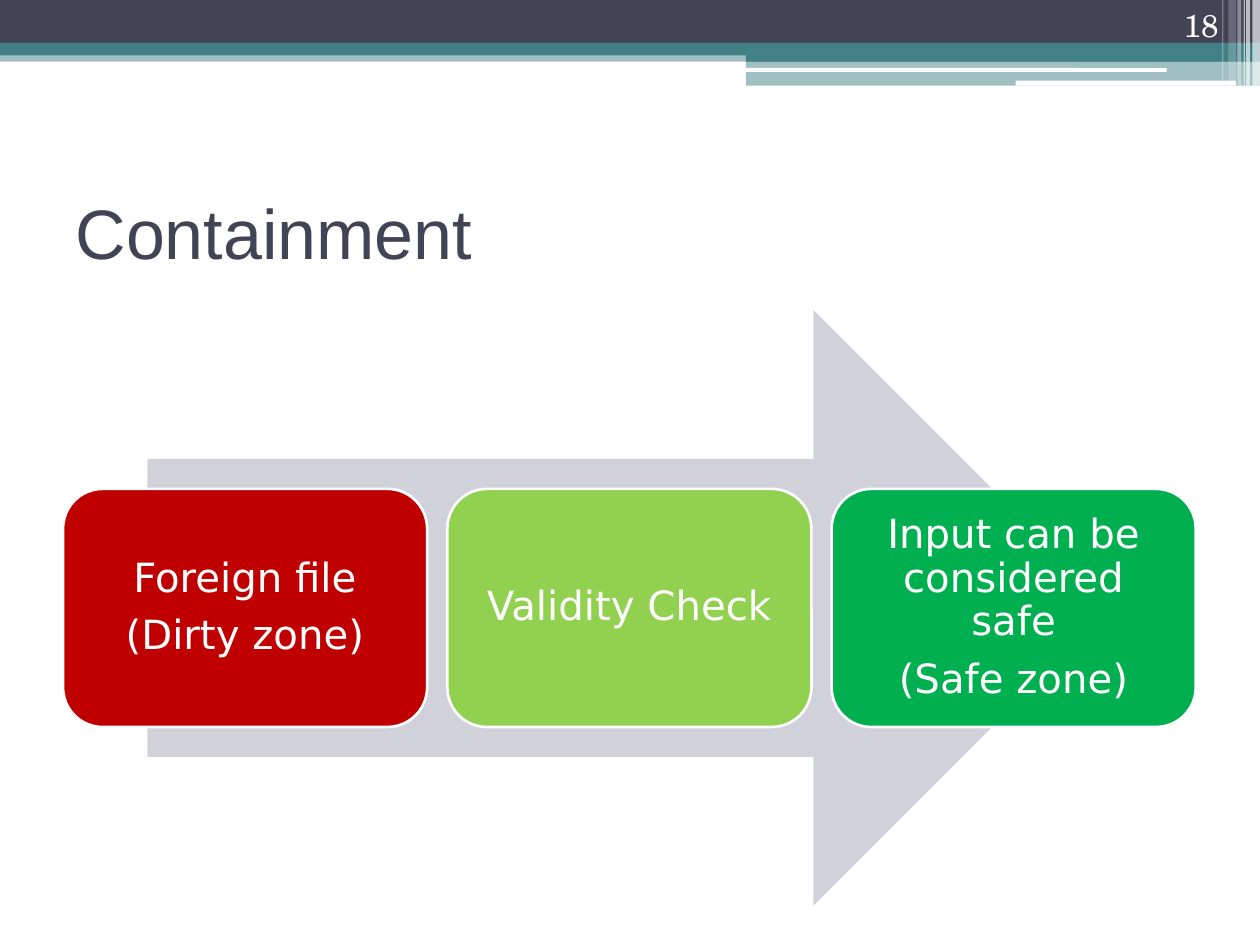
"""Build the Containment slide: a header band and three steps over an arrow."""
from lxml import etree
from pptx import Presentation
from pptx.dml.color import RGBColor
from pptx.enum.shapes import MSO_SHAPE
from pptx.enum.text import MSO_ANCHOR, PP_ALIGN
from pptx.oxml.ns import qn
from pptx.util import Inches, Pt

RECTANGLE, ROUNDED = MSO_SHAPE.RECTANGLE, MSO_SHAPE.ROUNDED_RECTANGLE
ARROW = MSO_SHAPE.RIGHT_ARROW
LEFT, CENTER, RIGHT = PP_ALIGN.LEFT, PP_ALIGN.CENTER, PP_ALIGN.RIGHT
MIDDLE, BOTTOM = MSO_ANCHOR.MIDDLE, MSO_ANCHOR.BOTTOM

WHITE, NAVY, TEAL, LILAC = "FFFFFF", "424456", "438086", "D1D1DA"

HEADER = [
    (RECTANGLE, (0, 0.4, 10, 0.09), TEAL, 50),
    (RECTANGLE, (0, 0, 10, 0.34), NAVY, 100),
    (RECTANGLE, (0, 0.34, 10, 0.1), TEAL, 100),
    (RECTANGLE, (5.92, 0.39, 4.08, 0.1), TEAL, 100),
    (RECTANGLE, (5.92, 0.48, 4.08, 0.2), TEAL, 50),
    (ROUNDED, (5.91, 0.54, 3.35, 0.03), WHITE, 100),
    (ROUNDED, (8.06, 0.64, 1.75, 0.04), WHITE, 100),
]
STRIPES = [
    (9.94, 0.06, 0.68, 65),
    (9.89, 0.03, 0.68, 65),
    (9.87, 0.01, 0.68, 60),
    (9.82, 0.03, 0.68, 40),
    (9.75, 0.06, 0.64, 20),
    (9.7, 0.01, 0.64, 30),
]
STEPS = [
    ("Foreign file\n(Dirty zone)", "C00000"),
    ("Validity Check", "92D050"),
    ("Input can be considered safe\n(Safe zone)", "00B050"),
]
STEP_LEFT, STEP_TOP, STEP_WIDTH, STEP_HEIGHT, STEP_PITCH = 0.5, 3.88, 2.89, 1.89, 3.05


def color(value):
    return RGBColor.from_string(value)


def add_box(slide, kind, box, fill, opacity=100):
    shape = slide.shapes.add_shape(kind, *map(Inches, box))
    shape.shadow.inherit = False
    shape.fill.solid()
    shape.fill.fore_color.rgb = color(fill)
    shape.line.fill.background()
    if opacity < 100:
        tint = shape.fill._xPr.find(qn("a:solidFill"))[0]
        etree.SubElement(tint, qn("a:alpha"), val=str(opacity * 1000))
    return shape


def write(shape, text, font, size, ink, alignment, anchor):
    frame = shape.text_frame
    frame.text = text
    frame.word_wrap = True
    frame.vertical_anchor = anchor
    for paragraph in frame.paragraphs:
        paragraph.alignment = alignment
        for run in paragraph.runs:
            run.font.name = font
            run.font.size = Pt(size)
            run.font.color.rgb = color(ink)
    return frame


def add_step(slide, index, text, fill):
    left = STEP_LEFT + index * STEP_PITCH
    step = add_box(slide, ROUNDED, (left, STEP_TOP, STEP_WIDTH, STEP_HEIGHT), fill)
    step.line.color.rgb = color(WHITE)
    step.line.width = Pt(1.5)
    frame = write(step, text, "DejaVu Sans", 23, WHITE, CENTER, MIDDLE)
    frame.margin_top = frame.margin_bottom = Inches(0.1)
    for paragraph in frame.paragraphs:
        paragraph.line_spacing = 0.9
        paragraph.space_after = Pt(8)


def main():
    presentation = Presentation()
    presentation.slide_width, presentation.slide_height = Inches(10), Inches(7.5)
    slide = presentation.slides.add_slide(presentation.slide_layouts[5])

    for kind, box, fill, opacity in HEADER:
        add_box(slide, kind, box, fill, opacity)
    for left, width, height, opacity in STRIPES:
        add_box(slide, RECTANGLE, (left, 0, width, height), WHITE, opacity)

    title = slide.shapes.title
    title.left, title.top, title.width, title.height = map(Inches, (0.5, 1.25, 9, 1.17))
    write(title, "Containment", "Arial", 40, NAVY, LEFT, MIDDLE)

    add_box(slide, ARROW, (1.17, 2.46, 7.65, 4.73), LILAC)
    for index, (text, fill) in enumerate(STEPS):
        add_step(slide, index, text, fill)

    number = slide.shapes.add_textbox(*map(Inches, (8.94, 0, 0.83, 0.4)))
    write(number, "18", "TeX Gyre Schola", 18, WHITE, RIGHT, BOTTOM)

    presentation.save("out.pptx")


if __name__ == "__main__":
    main()
